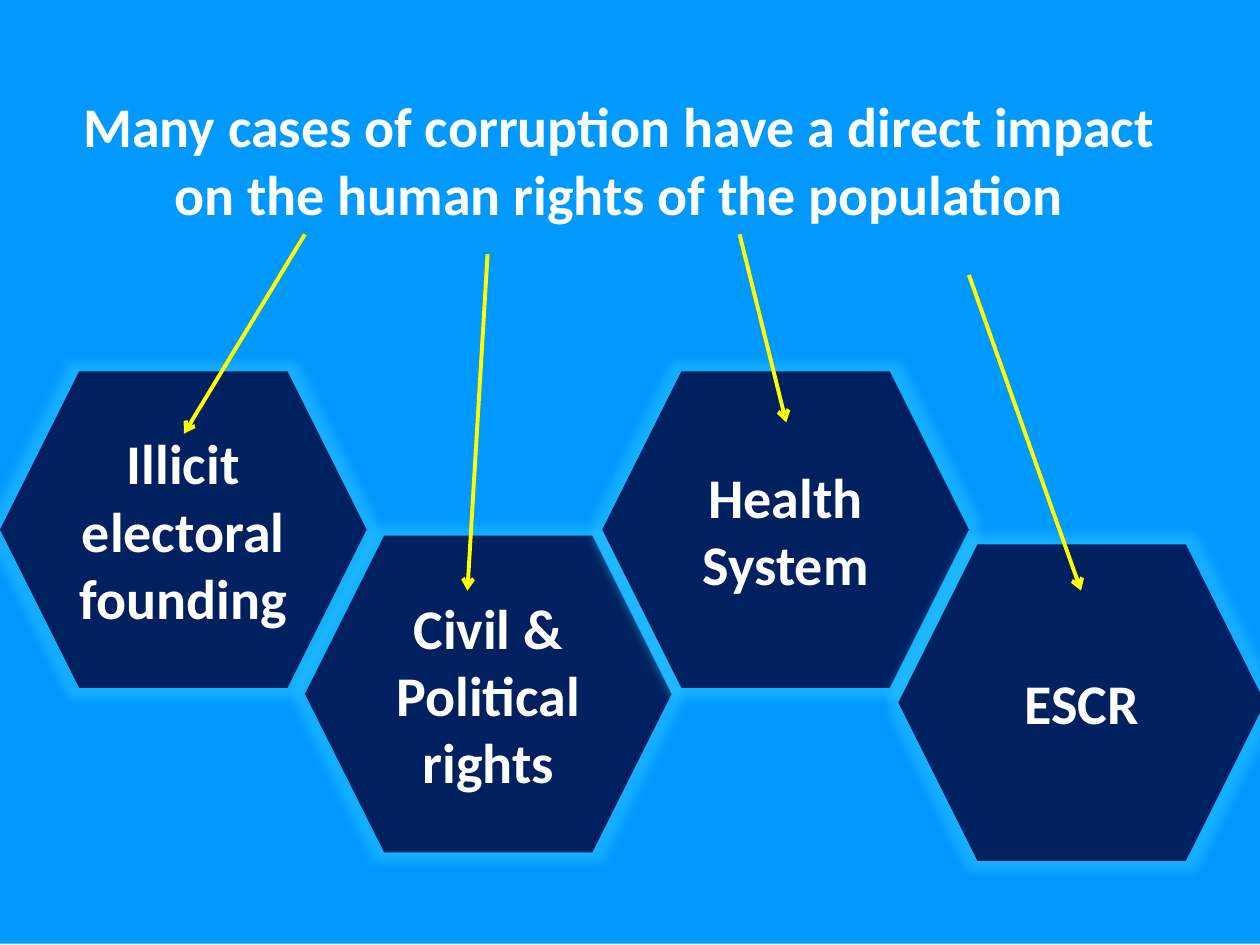
from lxml.etree import SubElement
from pptx import Presentation
from pptx.dml.color import RGBColor
from pptx.enum.shapes import MSO_CONNECTOR, MSO_SHAPE
from pptx.enum.text import MSO_ANCHOR, PP_ALIGN
from pptx.oxml import parse_xml
from pptx.oxml.ns import nsdecls, qn
from pptx.util import Inches, Pt

WIDTH, HEIGHT = Inches(10), Inches(7.5)
HEXAGON_SIZE = 29.1, 33.5
TEXT_FORMAT = {"name": "Calibri", "size": Pt(32), "bold": True}
GLOW = (f'<a:effectLst {nsdecls("a")}><a:glow rad="139700"><a:srgbClr val="33CCFF">'
        '<a:alpha val="40000"/></a:srgbClr></a:glow></a:effectLst>')


def place(*percents):
    """Turn alternating percentages of slide width and height into lengths."""
    return [int(side * percent / 100)
            for percent, side in zip(percents, (WIDTH, HEIGHT) * 2)]


def write(frame, text):
    frame.word_wrap = True
    frame.text = text
    for paragraph in frame.paragraphs:
        paragraph.alignment = PP_ALIGN.CENTER
        for attribute, value in TEXT_FORMAT.items():
            setattr(paragraph.font, attribute, value)
        paragraph.font.color.rgb = RGBColor.from_string("FFFFFF")


prs = Presentation()
prs.slide_width, prs.slide_height = WIDTH, HEIGHT
slide = prs.slides.add_slide(prs.slide_layouts[6])
shapes = slide.shapes

backdrop = shapes.add_shape(MSO_SHAPE.RECTANGLE, *place(0, -0.13, 101.2, 100))
backdrop.shadow.inherit = False
backdrop.fill.solid()
backdrop.fill.fore_color.rgb = RGBColor.from_string("0099FF")
backdrop.line.fill.background()

headline = shapes.add_textbox(*place(3.5, 9.07, 91.3, 15.73))
write(headline.text_frame,
      "Many cases of corruption have a direct impact on the human rights of the population")

# Affected area: label, left and top of its hexagon
areas = [
    ("Illicit electoral founding", 0, 39.3),
    ("Civil & Political rights", 24.2, 56.7),
    ("Health\nSystem", 47.8, 39.3),
    ("ESCR", 71.3, 57.6),
]
for label, left, top in areas:
    area = shapes.add_shape(MSO_SHAPE.HEXAGON, *place(left, top, *HEXAGON_SIZE))
    area.fill.solid()
    area.fill.fore_color.rgb = RGBColor.from_string("002060")
    area.line.fill.background()
    area._element.spPr.append(parse_xml(GLOW))
    area.text_frame.vertical_anchor = MSO_ANCHOR.MIDDLE
    write(area.text_frame, label)

# Impact arrows from the headline: start x, start y, end x, end y
impacts = [
    (24.2, 24.8, 14.6, 45.9),
    (58.7, 24.8, 62.4, 44.7),
    (38.7, 26.9, 37.1, 62.5),
    (76.9, 29.1, 85.8, 62.5),
]
for ends in impacts:
    impact = shapes.add_connector(MSO_CONNECTOR.STRAIGHT, *place(*ends))
    impact.line.color.rgb = RGBColor.from_string("FFFF00")
    impact.line.width = Pt(2.25)
    SubElement(impact.line._get_or_add_ln(), qn("a:tailEnd"), type="arrow")
    SubElement(impact._element.spPr, qn("a:effectLst"))

prs.save("out.pptx")
